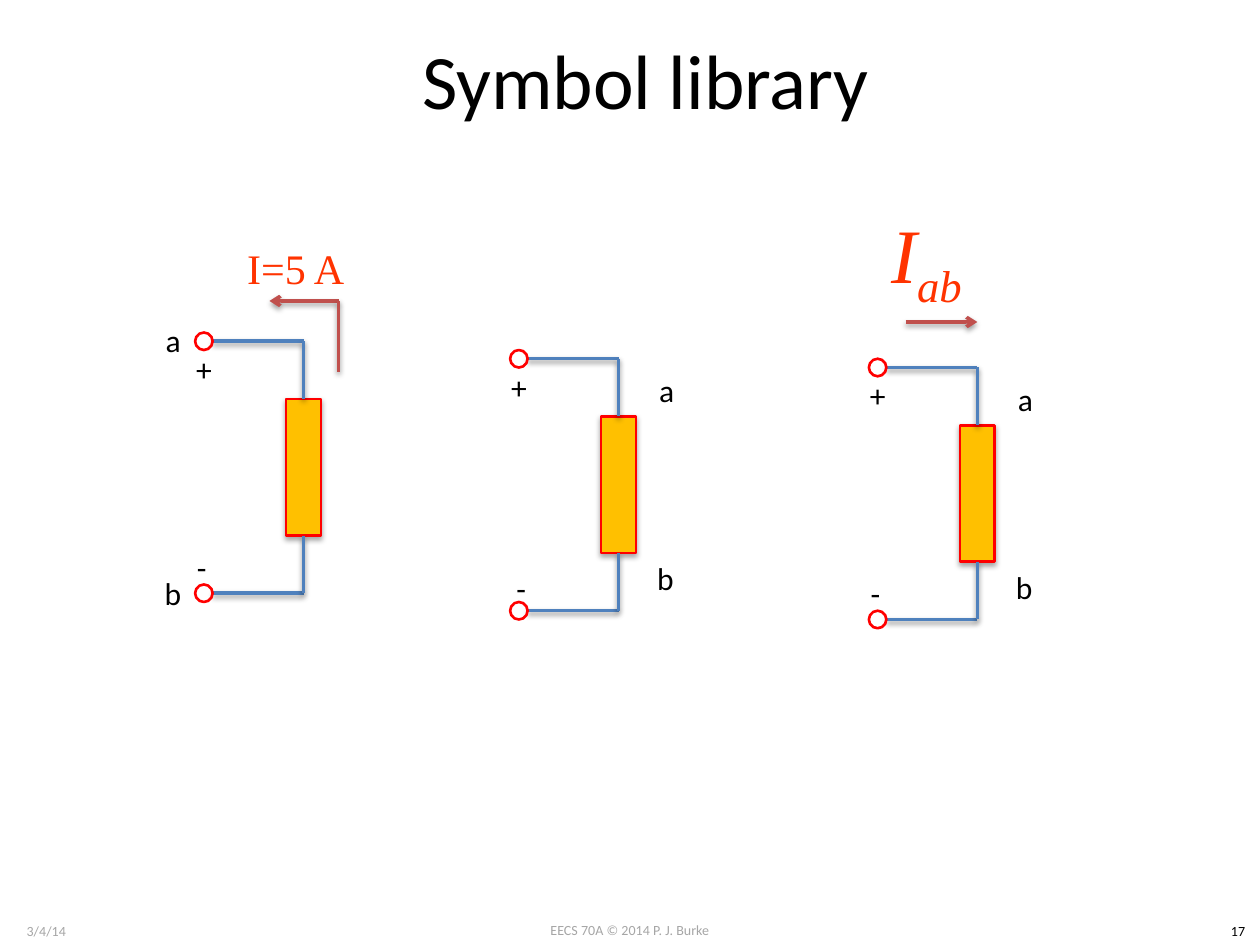
import pptx
import pptx.dml.color
import pptx.enum.shapes
import pptx.enum.text
import pptx.oxml
import pptx.oxml.ns
import pptx.util

Pt = pptx.util.Pt
MSO_SHAPE = pptx.enum.shapes.MSO_SHAPE
ANCHOR = pptx.enum.text.MSO_ANCHOR
ALIGN = pptx.enum.text.PP_ALIGN
FIT = pptx.enum.text.MSO_AUTO_SIZE

COLOURS = {"text": "000000", "footer": "A6A6A6", "wire": "4F81BD", "arrow": "C0504D",
           "current": "FF3300", "resistor": "FFC000", "outline": "FF0000"}
LABEL_WIDTHS = {"a": 23, "b": 24.5, "+": 24, "-": 20}

# Distances from the centre of a circuit's upper terminal
TERMINAL = 10
TERMINAL_GAP = 144
BRANCH_X = 57
RESISTOR_WIDTH, RESISTOR_HEIGHT = 20, 78
LEAD = (TERMINAL_GAP - RESISTOR_HEIGHT) / 2


def colour(name):
    return pptx.dml.color.RGBColor.from_string(COLOURS[name])


def add_shadow(shape, opacity, distance):
    """Cast a soft shadow straight down; call after the line is set."""
    properties = shape._element.spPr
    for old in properties.findall(pptx.oxml.ns.qn("a:effectLst")):
        properties.remove(old)
    properties.append(pptx.oxml.parse_xml(
        f'<a:effectLst {pptx.oxml.ns.nsdecls("a")}>'
        f'<a:outerShdw blurRad="{Pt(3.1)}" dist="{Pt(distance)}" dir="5400000" rotWithShape="0">'
        f'<a:srgbClr val="000000"><a:alpha val="{opacity * 1000}"/></a:srgbClr>'
        '</a:outerShdw></a:effectLst>'))


class SymbolSlide:
    def __init__(self, slide):
        self.slide = slide
        self.shapes = slide.shapes

    def start_group(self):
        self.shapes = self.slide.shapes.add_group_shape().shapes

    def title(self, words, left, top, width, height):
        title = self.slide.shapes.title
        title.left, title.top, title.width, title.height = map(Pt, (left, top, width, height))
        title.text_frame.vertical_anchor = ANCHOR.MIDDLE
        self.paragraph(title.text_frame, words, 44, "text", ALIGN.CENTER)

    def paragraph(self, frame, words, size, tint, align, face="Calibri"):
        paragraph = frame.paragraphs[0]
        paragraph.add_run().text = words
        paragraph.alignment = align
        paragraph.font.name = face
        paragraph.font.size = Pt(size)
        paragraph.font.color.rgb = colour(tint)
        return paragraph

    def text_frame(self, left, top, width, height, wrap=True):
        frame = self.shapes.add_textbox(Pt(left), Pt(top), Pt(width), Pt(height)).text_frame
        frame.word_wrap = wrap
        return frame

    def footer(self, words, left, top, width, tint):
        frame = self.text_frame(left, top, width, 17)
        self.paragraph(frame, words, 8, tint, ALIGN.CENTER)

    def label(self, words, left, top):
        frame = self.text_frame(left, top, LABEL_WIDTHS[words], 29, wrap=False)
        frame.auto_size = FIT.SHAPE_TO_FIT_TEXT
        self.paragraph(frame, words, 18, "text", ALIGN.LEFT)

    def current(self, words, left, top, width, height, size, subscript=None):
        frame = self.text_frame(left, top, width, height)
        frame.vertical_anchor = ANCHOR.MIDDLE
        paragraph = self.paragraph(frame, words, size, "current", ALIGN.CENTER, "Times New Roman")
        if subscript:
            paragraph.font.italic = True
            run = paragraph.add_run()
            run.text = subscript
            run.font._element.set("baseline", "-25000")

    def line(self, x1, y1, x2, y2, tint="wire", arrow=False):
        line = self.shapes.add_connector(pptx.enum.shapes.MSO_CONNECTOR.STRAIGHT,
                                         Pt(x1), Pt(y1), Pt(x2), Pt(y2))
        line.line.color.rgb = colour(tint)
        line.line.width = Pt(2)
        if arrow:
            line.line._get_or_add_ln().append(pptx.oxml.parse_xml(
                f'<a:tailEnd {pptx.oxml.ns.nsdecls("a")} type="arrow"/>'))
        add_shadow(line, 38, 1.6)
        return line

    def outlined(self, kind, left, top, width, height):
        shape = self.shapes.add_shape(kind, Pt(left), Pt(top), Pt(width), Pt(height))
        shape.shadow.inherit = False
        shape.fill.background()
        shape.line.color.rgb = colour("outline")
        shape.line.width = Pt(1.5)
        return shape

    def circuit(self, x, y, labels):
        """Draw two terminals joined through a resistor, with labels offset from (x, y)."""
        self.start_group()
        branch, bottom = x + BRANCH_X, y + TERMINAL_GAP
        resistor = self.outlined(MSO_SHAPE.RECTANGLE, branch - RESISTOR_WIDTH / 2, y + LEAD,
                                 RESISTOR_WIDTH, RESISTOR_HEIGHT)
        resistor.fill.solid()
        resistor.fill.fore_color.rgb = colour("resistor")
        add_shadow(resistor, 35, 1.8)
        for level, lead_end, side in ((y, y + LEAD, 0), (bottom, bottom - LEAD, 2)):
            self.line(x + TERMINAL / 2, level, branch, level)
            self.line(branch, level, branch, lead_end).end_connect(resistor, side)
            self.outlined(MSO_SHAPE.OVAL, x - TERMINAL / 2, level - TERMINAL / 2,
                          TERMINAL, TERMINAL)
        for words, (dx, dy) in labels.items():
            self.label(words, x + dx, y + dy)


def main():
    deck = pptx.Presentation()
    deck.slide_width, deck.slide_height = Pt(720), Pt(540)
    page = SymbolSlide(deck.slides.add_slide(deck.slide_layouts[5]))

    page.footer("EECS 70A © 2014 P. J. Burke", 276, 523, 168, "footer")
    page.footer("3/4/14", 0, 523.5, 53, "footer")
    page.footer("17", 695, 523.5, 25, "text")
    page.title("Symbol library", 45, 0, 648, 90)

    plus, minus = (-11.5, 1.5), (-11, 114.5)
    right_labels = {"a": (73, 3.5), "b": (72, 111), "+": plus}

    page.circuit(296.5, 205, {**right_labels, "-": (-8.5, 116.5)})

    page.circuit(501.5, 210, {**right_labels, "-": minus})
    page.line(517.5, 184, 558.5, 184, "arrow", arrow=True)
    page.current("I", 484.5, 111.5, 90, 73, 44, subscript="ab")

    page.circuit(116.5, 195, {"a": (-29, -15), "b": (-29.5, 129.5), "+": plus, "-": minus})
    page.line(193.5, 172, 154, 172, "arrow", arrow=True)
    page.line(193.5, 212.5, 193.5, 172, "arrow")
    page.current("I=5 A", 126, 127, 86, 52.5, 24)

    deck.save("out.pptx")


if __name__ == "__main__":
    main()
